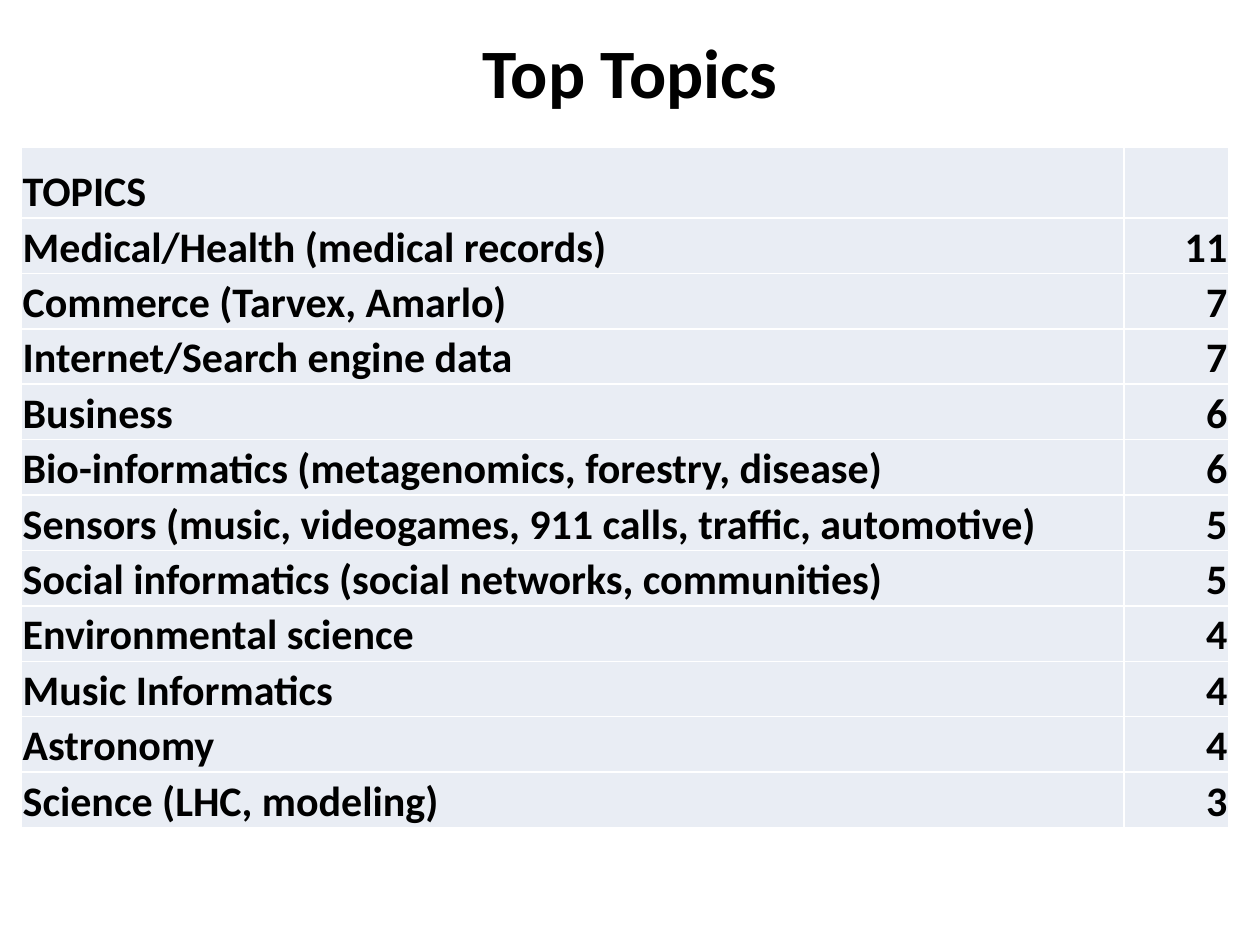
import pptx
import pptx.util
import pptx.dml.color
import pptx.enum.text
import pptx.oxml.ns
from lxml import etree

Inches, Pt = pptx.util.Inches, pptx.util.Pt
RGBColor = pptx.dml.color.RGBColor
ALIGN, ANCHOR = pptx.enum.text.PP_ALIGN, pptx.enum.text.MSO_ANCHOR

BLACK = RGBColor(0x00, 0x00, 0x00)
WHITE = RGBColor(0xFF, 0xFF, 0xFF)
PALE_BLUE = RGBColor(0xE9, 0xED, 0xF4)

TITLE = "Top Topics"
TOPICS = [
    ("TOPICS", ""),
    ("Medical/Health (medical records)", 11),
    ("Commerce (Tarvex, Amarlo)", 7),
    ("Internet/Search engine data", 7),
    ("Business", 6),
    ("Bio-informatics (metagenomics, forestry, disease)", 6),
    ("Sensors (music, videogames, 911 calls, traffic, automotive)", 5),
    ("Social informatics (social networks, communities)", 5),
    ("Environmental science", 4),
    ("Music Informatics", 4),
    ("Astronomy", 4),
    ("Science (LHC, modeling)", 3),
]
COLUMN_WIDTHS = (8.75, 0.83)
COLUMN_ALIGNS = (ALIGN.LEFT, ALIGN.RIGHT)
HEADER_HEIGHT, ROW_HEIGHT = 0.56, 0.44


def write(tf, text, size, align):
    p = tf.paragraphs[0]
    p.text = text
    p.alignment = align
    for r in p.runs:
        r.font.name = "Calibri"
        r.font.size = Pt(size)
        r.font.bold = True
        r.font.color.rgb = BLACK


def add_borders(cell, color, width):
    """Draw all four cell borders; call before the fill is set."""
    tc_pr = cell._tc.get_or_add_tcPr()
    qn = pptx.oxml.ns.qn
    for side in ("a:lnL", "a:lnR", "a:lnT", "a:lnB"):
        ln = etree.SubElement(tc_pr, qn(side), w=str(Pt(width)))
        fill = etree.SubElement(ln, qn("a:solidFill"))
        etree.SubElement(fill, qn("a:srgbClr"), val=str(color))


def add_title(slide):
    box = slide.shapes.add_textbox(Inches(0.5), Inches(0.17), Inches(9), Inches(0.78))
    tf = box.text_frame
    tf.word_wrap = True
    tf.vertical_anchor = ANCHOR.MIDDLE
    write(tf, TITLE, 39.6, ALIGN.CENTER)


def add_topics_table(slide):
    heights = [HEADER_HEIGHT] + [ROW_HEIGHT] * (len(TOPICS) - 1)
    table = slide.shapes.add_table(
        len(TOPICS), len(COLUMN_WIDTHS), Inches(0.17), Inches(1.17),
        Inches(sum(COLUMN_WIDTHS)), Inches(sum(heights))).table
    table.first_row = False
    table.horz_banding = False
    for column, width in zip(table.columns, COLUMN_WIDTHS):
        column.width = Inches(width)
    for row, height, values in zip(table.rows, heights, TOPICS):
        row.height = Inches(height)
        for cell, value, align in zip(row.cells, values, COLUMN_ALIGNS):
            cell.margin_left = cell.margin_right = cell.margin_top = Inches(0.01)
            cell.margin_bottom = 0
            cell.vertical_anchor = ANCHOR.BOTTOM
            add_borders(cell, WHITE, 1)
            cell.fill.solid()
            cell.fill.fore_color.rgb = PALE_BLUE
            write(cell.text_frame, str(value), 24, align)


def main():
    prs = pptx.Presentation()
    prs.slide_width, prs.slide_height = Inches(10), Inches(7.5)
    slide = prs.slides.add_slide(prs.slide_layouts[6])
    add_title(slide)
    add_topics_table(slide)
    prs.save("out.pptx")


if __name__ == "__main__":
    main()
